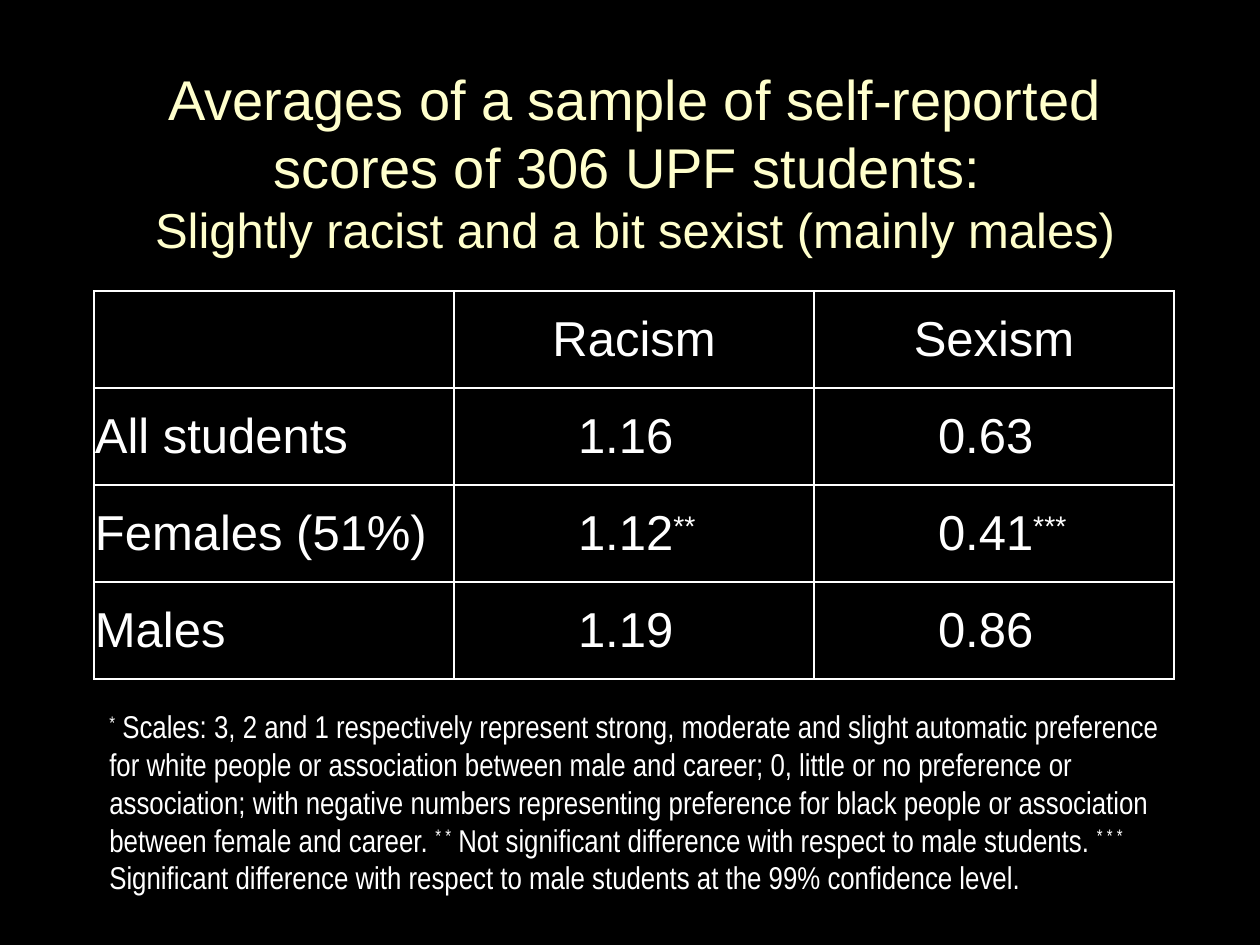
from typing import NamedTuple

from lxml.etree import SubElement
from pptx import Presentation
from pptx.dml.color import RGBColor
from pptx.enum.text import MSO_ANCHOR as Anchor, MSO_AUTO_SIZE as AutoSize, PP_ALIGN as Align
from pptx.oxml.ns import qn
from pptx.util import Emu, Inches, Pt

PX = Inches(1) / 126
BLACK = RGBColor(0x00, 0x00, 0x00)
WHITE = RGBColor(0xFF, 0xFF, 0xFF)
CREAM = RGBColor(0xFF, 0xFF, 0xCC)

COLUMN_WIDTH, ROW_HEIGHT = 360, 97
SCORE_INDENT = 123
SUPERSCRIPT = "30000"


class Box(NamedTuple):
    left: int
    top: int
    width: int
    height: int


class Score(NamedTuple):
    value: str
    mark: str = ""


class Group(NamedTuple):
    name: str
    racism: Score
    sexism: Score


TITLE_BOX = Box(73, 53, 1124, 217)
TABLE_BOX = Box(94, 291, 3 * COLUMN_WIDTH, 4 * ROW_HEIGHT)
NOTE_BOX = Box(97, 701, 1081, 202)

HEADINGS = ["", "Racism", "Sexism"]
GROUPS = [
    Group("All students", Score("1.16"), Score("0.63")),
    Group("Females (51%)", Score("1.12", "**"), Score("0.41", "***")),
    Group("Males", Score("1.19"), Score("0.86")),
]

# Superscript mark and the text that follows it
NOTES = [
    ("*", " Scales: 3, 2 and 1 respectively represent strong, moderate and slight "
          "automatic preference for white people or association between male and career; "
          "0, little or no preference or association; with negative numbers representing "
          "preference for black people or association between female and career. "),
    ("* *", " Not significant difference with respect to male students. "),
    ("* * * ", "Significant difference with respect to male students at the 99% "
               "confidence level."),
]


def px(length: int) -> Emu:
    return Emu(round(length * PX))


def emu_box(box: Box) -> list[Emu]:
    return [px(length) for length in box]


def add_text(para, text: str, *, size: int = 28, font: str = "Arial",
             color: RGBColor = WHITE, raised: bool = False) -> None:
    if not text:
        return
    span = para.add_run()
    span.text = text
    span.font.size = Pt(size)
    span.font.name = font
    span.font.color.rgb = color
    if raised:
        span.font._element.set("baseline", SUPERSCRIPT)


def style_cell(cell) -> None:
    """Give a cell thin margins, white borders and a black fill."""
    cell.vertical_anchor = Anchor.MIDDLE
    cell.margin_left = cell.margin_right = cell.margin_top = px(1)
    cell.margin_bottom = 0
    properties = cell._tc.get_or_add_tcPr()
    for side in ("lnL", "lnR", "lnT", "lnB"):
        line = SubElement(properties, qn(f"a:{side}"), w=str(Pt(1)))
        fill = SubElement(line, qn("a:solidFill"))
        SubElement(fill, qn("a:srgbClr"), val=str(WHITE))
    cell.fill.solid()
    cell.fill.fore_color.rgb = BLACK


def add_title(slide) -> None:
    title = slide.shapes.title
    title.left, title.top, title.width, title.height = emu_box(TITLE_BOX)
    frame = title.text_frame
    frame.auto_size = AutoSize.NONE
    frame.vertical_anchor = Anchor.MIDDLE
    para = frame.paragraphs[0]
    para.alignment = Align.CENTER
    add_text(para, "Averages of a sample of self-reported scores of 306 UPF students: ",
             size=32, color=CREAM)
    para.add_line_break()
    add_text(para, "Slightly racist and a bit sexist (mainly males)", color=CREAM)


def add_score_table(slide) -> None:
    table = slide.shapes.add_table(len(GROUPS) + 1, len(HEADINGS), *emu_box(TABLE_BOX)).table
    table.first_row = table.horz_banding = False
    for column in table.columns:
        column.width = px(COLUMN_WIDTH)
    for row in table.rows:
        row.height = px(ROW_HEIGHT)
    for cell in table.iter_cells():
        style_cell(cell)

    for column, heading in enumerate(HEADINGS):
        para = table.cell(0, column).text_frame.paragraphs[0]
        para.alignment = Align.CENTER
        add_text(para, heading)

    for row, group in enumerate(GROUPS, start=1):
        add_text(table.cell(row, 0).text_frame.paragraphs[0], group.name)
        for column, score in enumerate((group.racism, group.sexism), start=1):
            para = table.cell(row, column).text_frame.paragraphs[0]
            indent = para._p.get_or_add_pPr()
            indent.set("marL", str(px(SCORE_INDENT)))
            indent.set("indent", "0")
            add_text(para, score.value)
            add_text(para, score.mark, raised=True)


def add_notes_below(slide) -> None:
    frame = slide.shapes.add_textbox(*emu_box(NOTE_BOX)).text_frame
    frame.word_wrap = True
    frame.auto_size = AutoSize.SHAPE_TO_FIT_TEXT
    para = frame.paragraphs[0]
    for mark, text in NOTES:
        add_text(para, mark, size=18, font="Arial Narrow", raised=True)
        add_text(para, text, size=18, font="Arial Narrow")


def main() -> None:
    deck = Presentation()
    deck.slide_width, deck.slide_height = px(1260), px(945)
    slide = deck.slides.add_slide(deck.slide_layouts.get_by_name("Title Only"))
    slide.background.fill.solid()
    slide.background.fill.fore_color.rgb = BLACK

    add_title(slide)
    add_score_table(slide)
    add_notes_below(slide)
    deck.save("out.pptx")


if __name__ == "__main__":
    main()
